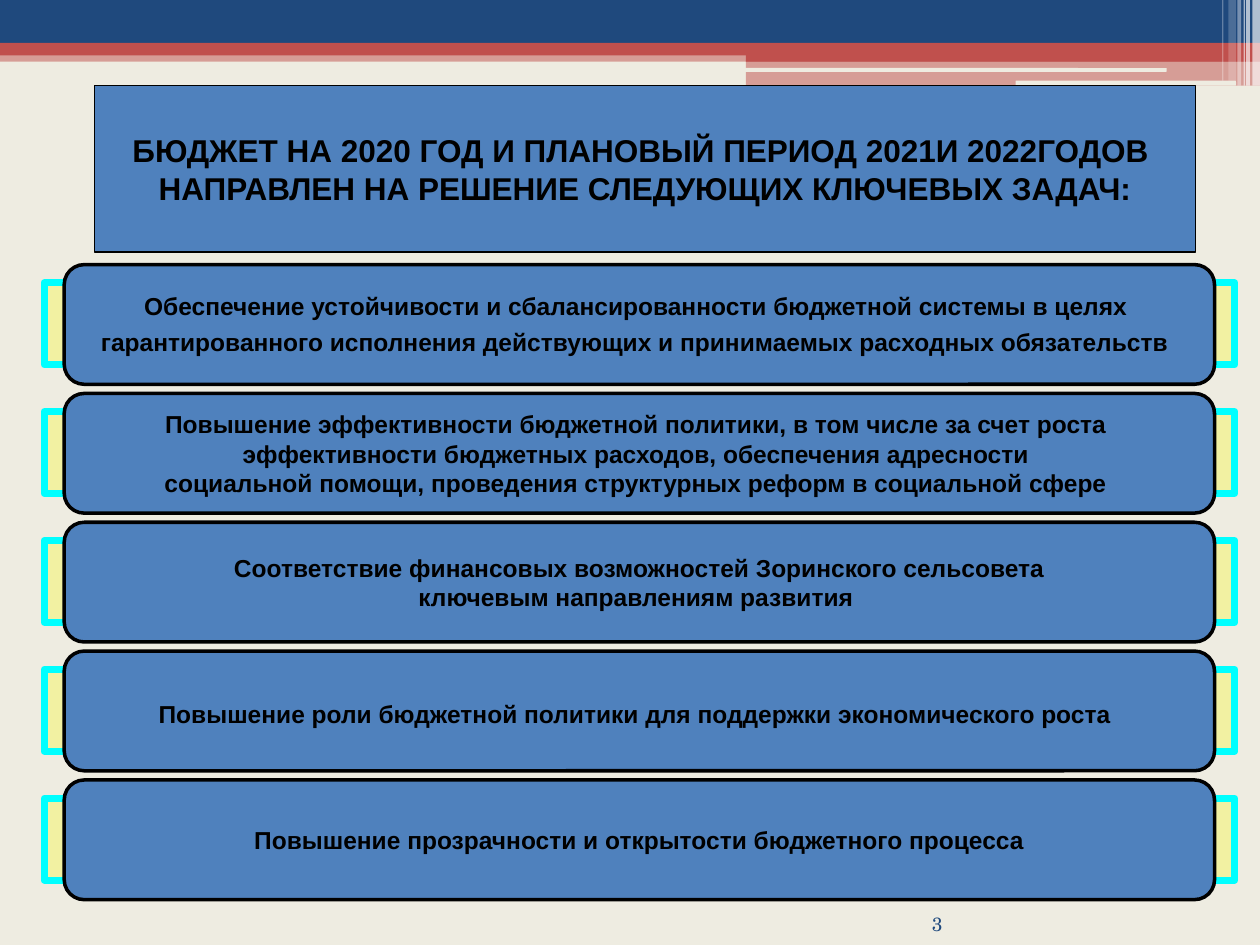
from lxml import etree
from pptx import Presentation
from pptx import util as u
from pptx.dml.color import RGBColor
from pptx.enum import shapes, text
from pptx.oxml import ns

COLUMNS, ROWS = 1000, 750
CELL = u.Inches(0.01)
COLORS = {
    "background": "EEECE1", "navy": "1F497D", "red": "C0504D", "blue": "4F81BD",
    "yellow": "FFFF00", "cyan": "00FFFF", "black": "000000", "white": "FFFFFF",
}
RECTANGLE = shapes.MSO_SHAPE.RECTANGLE
ROUNDED = shapes.MSO_SHAPE.ROUNDED_RECTANGLE

BANDS = [
    ((0, 40, COLUMNS, 9), "red", 50, RECTANGLE),
    ((0, 0, COLUMNS, 34), "navy", 100, RECTANGLE),
    ((0, 34, COLUMNS, 10), "red", 100, RECTANGLE),
    ((592, 39, 408, 10), "red", 100, RECTANGLE),
    ((592, 48, 408, 20), "red", 50, RECTANGLE),
    ((591, 54, 335, 3), "background", 100, ROUNDED),
    ((806, 64, 175, 4), "background", 100, ROUNDED),
]
STRIPES = [
    (994, 6, 68, 65), (989, 3, 68, 65), (987, 1, 68, 60),
    (982, 3, 68, 40), (975, 6, 64, 20), (970, 1, 64, 30),
]
TITLE = [
    "БЮДЖЕТ НА 2020 ГОД И ПЛАНОВЫЙ ПЕРИОД 2021И 2022ГОДОВ ",
    "НАПРАВЛЕН НА РЕШЕНИЕ СЛЕДУЮЩИХ КЛЮЧЕВЫХ ЗАДАЧ:",
]
TASKS = [
    (["Обеспечение устойчивости и сбалансированности бюджетной системы в целях ",
      "гарантированного исполнения действующих и принимаемых расходных обязательств"], True),
    (["Повышение эффективности бюджетной политики, в том числе за счет роста ",
      "эффективности бюджетных расходов, обеспечения адресности ",
      "социальной помощи, проведения структурных реформ в социальной сфере "], False),
    (["Соответствие финансовых возможностей Зоринского сельсовета",
      "ключевым направлениям развития "], False),
    (["Повышение роли бюджетной политики для поддержки экономического роста"], True),
    (["Повышение прозрачности и открытости бюджетного процесса"], False),
]
TASK_TOP, TASK_PITCH = 210, 102.25


def color(name):
    """Return the named colour."""
    return RGBColor.from_string(COLORS[name])


def place(box):
    """Turn grid columns and rows into slide lengths."""
    return [round(value * CELL) for value in box]


def add_block(slide, box, fill, opacity=100, kind=RECTANGLE, line=None, width=0):
    """Add a filled shape with optional transparency and outline."""
    shape = slide.shapes.add_shape(kind, *place(box))
    shape.shadow.inherit = False
    shape.fill.solid()
    shape.fill.fore_color.rgb = color(fill)
    if opacity < 100:
        source = shape.fill._xPr.find(ns.qn("a:solidFill"))[0]
        etree.SubElement(source, ns.qn("a:alpha"), val=str(opacity * 1000))
    if line:
        shape.line.color.rgb = color(line)
        shape.line.width = u.Pt(width)
    else:
        shape.line.fill.background()
    return shape


def style_run(run, size, name="black", font="Arial", bold=True):
    """Set the font of a run."""
    run.font.size = u.Pt(size)
    run.font.name = font
    run.font.bold = bold
    run.font.color.rgb = color(name)


def write_lines(shape, lines, size, tall_end=False):
    """Write centred bold lines, with an optional taller closing space."""
    frame = shape.text_frame
    frame.text = "\n".join(lines)
    frame.word_wrap = False
    frame.vertical_anchor = text.MSO_ANCHOR.MIDDLE
    for paragraph in frame.paragraphs:
        paragraph.alignment = text.PP_ALIGN.CENTER
        style_run(paragraph.runs[0], size)
    if tall_end:
        run = frame.paragraphs[-1].add_run()
        run.text = " "
        style_run(run, 18, bold=False)


def add_header(slide):
    """Draw the coloured bands and the pale stripes at the top."""
    for box, fill, opacity, kind in BANDS:
        add_block(slide, box, fill, opacity, kind)
    for left, width, height, opacity in STRIPES:
        add_block(slide, (left, 0, width, height), "white", opacity)


def add_task(slide, index, lines, tall_end):
    """Draw one task card over its outlined backing bar."""
    top = TASK_TOP + index * TASK_PITCH
    add_block(slide, (35, top + 14.5, 945, 65), "yellow", 28, line="cyan", width=4)
    card = add_block(slide, (51, top, 913, 95), "blue", kind=ROUNDED, line="black", width=2)
    write_lines(card, lines, 14, tall_end)


def add_page_number(slide, number):
    """Add the page number at the bottom."""
    frame = slide.shapes.add_textbox(*place((684, 717, 64, 25))).text_frame
    frame.text = str(number)
    frame.word_wrap = True
    frame.vertical_anchor = text.MSO_ANCHOR.BOTTOM
    frame.margin_left = frame.margin_right = frame.margin_top = frame.margin_bottom = 0
    paragraph = frame.paragraphs[0]
    paragraph.alignment = text.PP_ALIGN.RIGHT
    style_run(paragraph.runs[0], 11, "navy", "TeX Gyre Schola", False)


def main():
    """Build the slide and save it."""
    presentation = Presentation()
    presentation.slide_width, presentation.slide_height = COLUMNS * CELL, ROWS * CELL
    slide = presentation.slides.add_slide(presentation.slide_layouts[6])
    slide.background.fill.solid()
    slide.background.fill.fore_color.rgb = color("background")
    add_header(slide)
    add_page_number(slide, 3)
    title = add_block(slide, (75, 68, 874, 132), "blue", line="black", width=0.75)
    write_lines(title, TITLE, 18)
    for index, (lines, tall_end) in enumerate(TASKS):
        add_task(slide, index, lines, tall_end)
    presentation.save("out.pptx")


if __name__ == "__main__":
    main()
